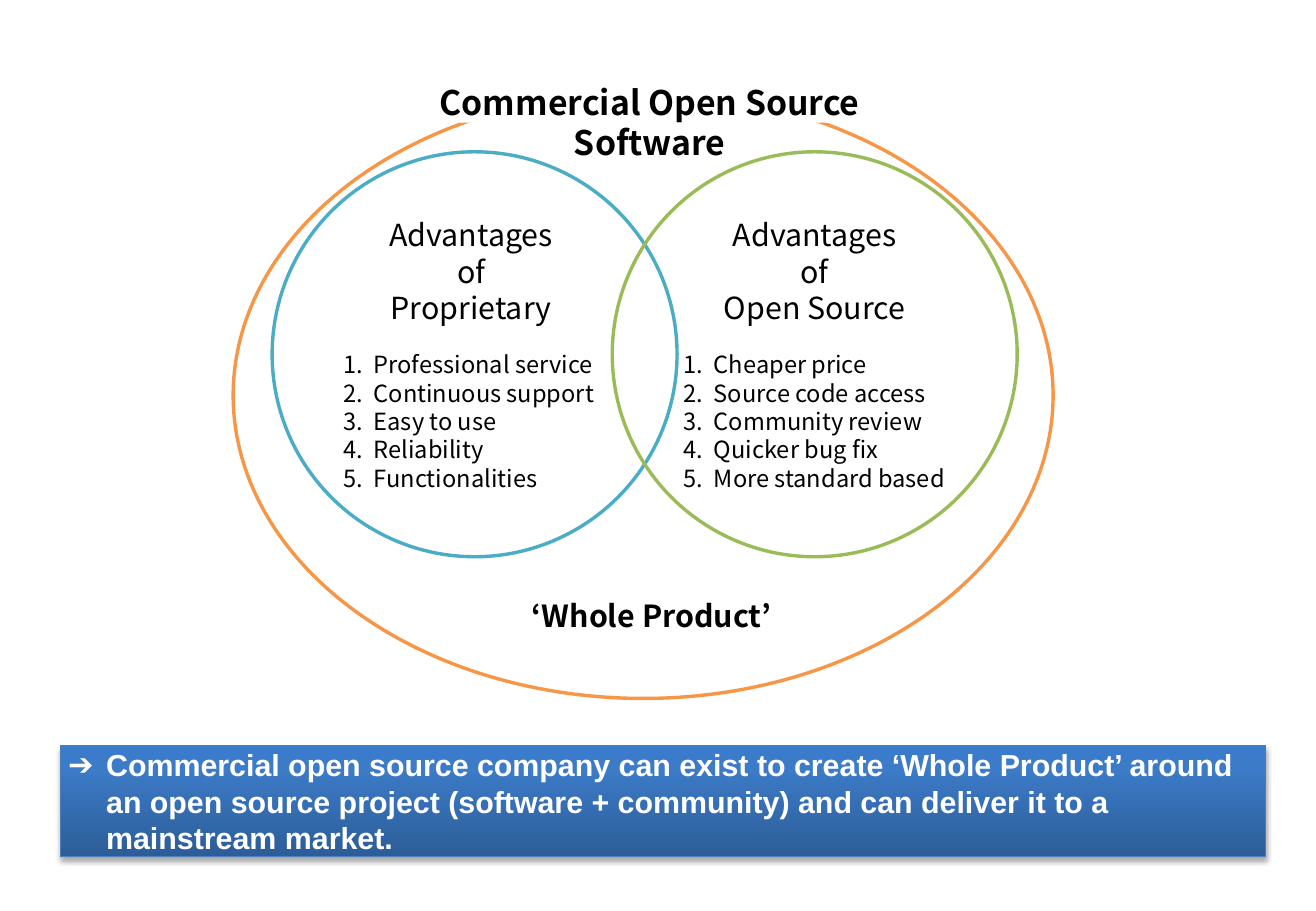
"""Build the slide on commercial open source software as a whole product."""
from lxml.etree import SubElement
from pptx import Presentation
from pptx.dml.color import RGBColor
from pptx.enum.shapes import MSO_SHAPE as SHAPE
from pptx.enum.text import MSO_ANCHOR as ANCHOR, MSO_AUTO_SIZE as FIT, PP_ALIGN as ALIGN
from pptx.oxml.ns import qn
from pptx.util import Pt


def rgb(value):
    return RGBColor.from_string(value)


def write(tf, text, size=18, font="Noto Sans CJK KR", color="000000", bold=False,
          align=ALIGN.CENTER, before=0, left=0, hang=0, bullet=None):
    p = tf.paragraphs[0]
    if p.runs:
        p = tf.add_paragraph()
    p.alignment, p.space_before = align, Pt(before)
    pPr = p._p.get_or_add_pPr()
    pPr.set("marL", str(Pt(left)))
    pPr.set("indent", str(-Pt(hang)))
    if bullet == "number":
        SubElement(pPr, qn("a:buAutoNum"), type="arabicPeriod")
    elif bullet:
        SubElement(pPr, qn("a:buFont"), typeface=font)
        SubElement(pPr, qn("a:buChar"), char=bullet)
    r = p.add_run()
    r.text = text
    r.font.size, r.font.name, r.font.bold = Pt(size), font, bold
    r.font.color.rgb = rgb(color)


class Slide:
    """Holds the slide and its style."""

    line_width = 2
    white = "FFFFFF"

    def __init__(self, prs):
        self.s = prs.slides.add_slide(prs.slide_layouts[6])

    def shape(self, kind, box, fill=None, line=None, width=line_width):
        sp = self.s.shapes.add_shape(kind, *map(Pt, box))
        sp.shadow.inherit = False
        if fill:
            sp.fill.solid()
            sp.fill.fore_color.rgb = rgb(fill)
        else:
            sp.fill.background()
        if line:
            sp.line.color.rgb = rgb(line)
            sp.line.width = Pt(width)
        else:
            sp.line.fill.background()
        return sp

    def frame(self, sp, anchor=ANCHOR.TOP, fit=FIT.SHAPE_TO_FIT_TEXT):
        tf = sp.text_frame
        tf.word_wrap, tf.auto_size, tf.vertical_anchor = True, fit, anchor
        tf.margin_left = tf.margin_top = tf.margin_right = tf.margin_bottom = 0
        return tf

    def circle(self, x, line, heading, advantages, fill=None):
        sp = self.shape(SHAPE.OVAL, (x, 90, 240, 240), fill, line)
        tf = sp.text_frame
        tf.word_wrap = True
        for text in heading:
            write(tf, text)
        for i, text in enumerate(advantages):
            write(tf, text, size=14, align=ALIGN.LEFT, before=0 if i else 14.4,
                  left=18, hang=18, bullet="number")

    def title(self, box, text):
        sp = self.shape(SHAPE.RECTANGLE, box, self.white)
        write(self.frame(sp, fit=FIT.NONE), text, size=20, bold=True, left=4.3)

    def label(self, box, text):
        sp = self.s.shapes.add_textbox(*map(Pt, box))
        write(self.frame(sp), text, bold=True, left=4.3)

    def banner(self, box, text, stops, line):
        sp = self.shape(SHAPE.RECTANGLE, box, line=line, width=0.75)
        sp.fill.gradient()
        sp.fill.gradient_angle = 90
        spPr = sp.element.spPr
        gsLst = spPr.find(f".//{qn('a:gsLst')}")
        gsLst.clear()
        for pos, color in stops:
            gs = SubElement(gsLst, qn("a:gs"), pos=str(pos * 1000))
            SubElement(gs, qn("a:srgbClr"), val=color)
        shadow = SubElement(spPr.find(qn("a:effectLst")), qn("a:outerShdw"),
                            blurRad=str(Pt(3.1)), dist=str(Pt(1.8)),
                            dir="5400000", rotWithShape="0")
        black = SubElement(shadow, qn("a:srgbClr"), val="000000")
        SubElement(black, qn("a:alpha"), val="35000")
        write(self.frame(sp, ANCHOR.MIDDLE), text, font="Arial", color=self.white,
              bold=True, align=ALIGN.LEFT, left=26.9, hang=22.5, bullet="➔")


def main():
    prs = Presentation()
    prs.slide_width, prs.slide_height = Pt(780), Pt(540)
    slide = Slide(prs)
    slide.shape(SHAPE.OVAL, (138.2, 54.7, 486, 359.3), line="F79646")
    slide.circle(161.3, "4BACC6", ["Advantages ", "of ", "Proprietary "],
                 ["Professional service", "Continuous support", "Easy to use",
                  "Reliability", "Functionalities"], fill=slide.white)
    slide.circle(362.9, "9BBB59", ["Advantages", "of", "Open Source"],
                 ["Cheaper price", "Source code access", "Community review",
                  "Quicker bug fix", "More standard based"])
    slide.title((210.2, 48.2, 345.6, 24.5), "Commercial Open Source Software")
    slide.label((228.2, 354.2, 311.8, 21.6), "‘Whole Product’")
    slide.banner((36, 442.1, 714.2, 65.5),
                 "Commercial open source company can exist to create ‘Whole Product’ "
                 "around an open source project (software + community) and can deliver "
                 "it to a mainstream market.",
                 [(0, "2C5D98"), (80, "3C7BC7"), (100, "3A7CCB")], "4A7EBB")
    prs.save("out.pptx")


if __name__ == "__main__":
    main()
